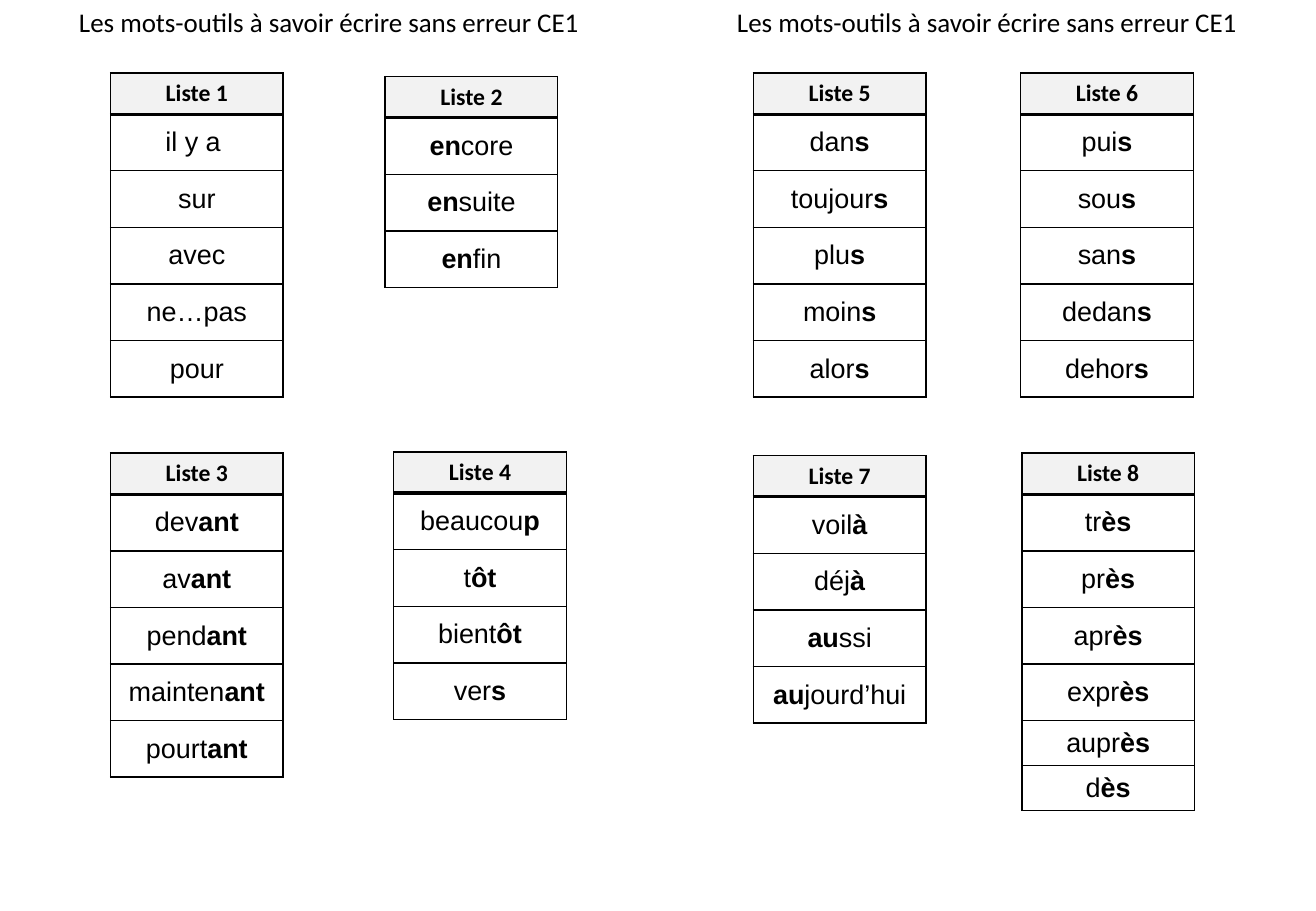
from dataclasses import dataclass

from lxml import etree
from pptx import Presentation
from pptx.dml.color import RGBColor
from pptx.enum.text import MSO_ANCHOR, PP_ALIGN
from pptx.oxml.ns import qn
from pptx.slide import Slide
from pptx.table import _Cell
from pptx.text.text import _Paragraph
from pptx.util import Inches, Pt

CENTER = PP_ALIGN.CENTER
MIDDLE = MSO_ANCHOR.MIDDLE


@dataclass(frozen=True)
class Theme:
    ink: str = "000000"
    header_fill: str = "F2F2F2"
    word_fill: str = "FFFFFF"
    heading_font: str = "Calibri"
    word_font: str = "Arial"
    title_size: float = 16
    header_size: float = 14
    word_size: float = 16
    thin: float = 1
    thick: float = 2.25


@dataclass(frozen=True)
class WordList:
    number: int
    left: float
    top: float
    words: tuple[str, ...]
    short_rows: int = 0


THEME = Theme()
SLIDE_WIDTH, SLIDE_HEIGHT = 10.83, 7.5
TITLE = "Les mots-outils à savoir écrire sans erreur CE1"
TITLE_HEIGHT = 0.37
LIST_WIDTH = 1.42
HEADER_HEIGHT = 0.34
WORD_HEIGHT = 2.33 / 5
SHORT_HEIGHT = 0.37
BOLD_MARK = "*"

WORD_LISTS = (
    WordList(1, 0.91, 0.6, ("il y a ", "sur", "avec", "ne…pas", "pour")),
    WordList(2, 3.17, 0.63, ("*en*core", "*en*suite", "*en*fin")),
    WordList(3, 0.91, 3.73,
             ("dev*ant*", "av*ant*", "pend*ant*", "mainten*ant*", "pourt*ant*")),
    WordList(4, 3.24, 3.72, ("beaucou*p*", "t*ôt*", "bient*ôt*", "ver*s*")),
    WordList(5, 6.2, 0.6, ("dan*s*", "toujour*s*", "plu*s*", "moin*s*", "alor*s*")),
    WordList(6, 8.4, 0.6, ("pui*s*", "sou*s*", "san*s*", "dedan*s*", "dehor*s*")),
    WordList(7, 6.2, 3.75, ("voil*à*", "déj*à*", "*au*ssi", "*au*jourd’hui")),
    WordList(8, 8.41, 3.73,
             ("tr*ès*", "pr*ès*", "apr*ès*", "expr*ès*", "aupr*ès*", "d*ès*"),
             short_rows=2),
)


def add_runs(p: _Paragraph, text: str, font: str, size: float) -> None:
    p.alignment = CENTER
    for i, part in enumerate(text.split(BOLD_MARK)):
        if part:
            r = p.add_run()
            r.text = part
            r.font.name = font
            r.font.size = Pt(size)
            r.font.bold = i % 2 == 1
            r.font.color.rgb = RGBColor.from_string(THEME.ink)


def set_borders(cell: _Cell, top: float, bottom: float) -> None:
    tc_pr = cell._tc.get_or_add_tcPr()
    widths = {"a:lnL": THEME.thin, "a:lnR": THEME.thin, "a:lnT": top, "a:lnB": bottom}
    for tag, width in widths.items():
        ln = etree.SubElement(tc_pr, qn(tag), w=str(Pt(width)))
        fill = etree.SubElement(ln, qn("a:solidFill"))
        etree.SubElement(fill, qn("a:srgbClr"), val=THEME.ink)


def fill_cell(cell: _Cell, text: str, font: str, size: float, fill: str,
              top: float, bottom: float) -> None:
    set_borders(cell, top, bottom)
    cell.fill.solid()
    cell.fill.fore_color.rgb = RGBColor.from_string(fill)
    cell.vertical_anchor = MIDDLE
    add_runs(cell.text_frame.paragraphs[0], text, font, size)


def add_title(s: Slide, left: float) -> None:
    sp = s.shapes.add_textbox(Inches(left), 0, Inches(SLIDE_WIDTH / 2),
                              Inches(TITLE_HEIGHT))
    tf = sp.text_frame
    tf.word_wrap = True
    add_runs(tf.paragraphs[0], TITLE, THEME.heading_font, THEME.title_size)


def add_word_list(s: Slide, item: WordList) -> None:
    full_rows = len(item.words) - item.short_rows
    heights = ([HEADER_HEIGHT] + [WORD_HEIGHT] * full_rows
               + [SHORT_HEIGHT] * item.short_rows)
    table = s.shapes.add_table(len(heights), 1, Inches(item.left), Inches(item.top),
                               Inches(LIST_WIDTH), Inches(sum(heights))).table
    table.first_row = False
    table.horz_banding = False
    for row, height in zip(table.rows, heights):
        row.height = Inches(height)
    fill_cell(table.cell(0, 0), f"*Liste {item.number}*", THEME.heading_font,
              THEME.header_size, THEME.header_fill, THEME.thin, THEME.thick)
    for i, word in enumerate(item.words, start=1):
        top = THEME.thick if i == 1 else THEME.thin
        fill_cell(table.cell(i, 0), word, THEME.word_font, THEME.word_size,
                  THEME.word_fill, top, THEME.thin)


def main() -> None:
    prs = Presentation()
    prs.slide_width = Inches(SLIDE_WIDTH)
    prs.slide_height = Inches(SLIDE_HEIGHT)
    s = prs.slides.add_slide(prs.slide_layouts[6])
    for left in (0, SLIDE_WIDTH / 2):
        add_title(s, left)
    for item in WORD_LISTS:
        add_word_list(s, item)
    prs.save("out.pptx")


if __name__ == "__main__":
    main()
